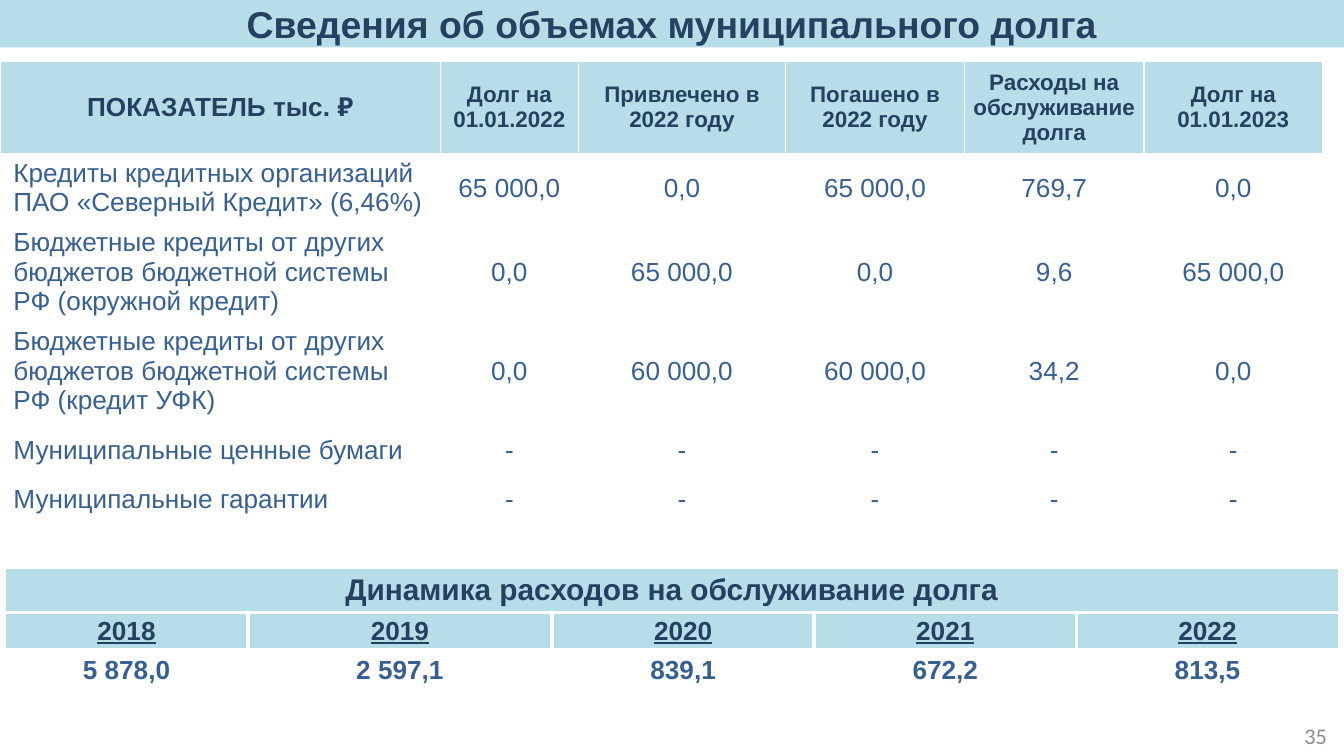
from dataclasses import dataclass

from lxml.etree import SubElement
from pptx import Presentation
from pptx.dml.color import RGBColor as Rgb
from pptx.enum.shapes import MSO_SHAPE as Shape
from pptx.enum.text import MSO_ANCHOR as Anchor, PP_ALIGN as Align
from pptx.oxml.ns import qn
from pptx.util import Pt


@dataclass(frozen=True)
class Theme:
    """Colours, fonts and type sizes of the slide."""
    band: str = "B7DEE8"
    dark: str = "254061"
    blue: str = "376092"
    grey: str = "8C8C8C"
    white: str = "FFFFFF"
    sans: str = "Arial"
    foot: str = "Calibri"
    title: int = 20
    head: int = 16
    body: int = 14
    small: int = 12


THEME = Theme()
DEBT = [
    ["ПОКАЗАТЕЛЬ тыс. ₽", "Долг на 01.01.2022", "Привлечено в 2022 году",
     "Погашено в 2022 году", "Расходы на обслуживание долга", "Долг на 01.01.2023"],
    ["Кредиты кредитных организаций\nПАО «Северный Кредит» (6,46%)",
     "65 000,0", "0,0", "65 000,0", "769,7", "0,0"],
    ["Бюджетные кредиты от других бюджетов бюджетной системы РФ (окружной кредит)",
     "0,0", "65 000,0", "0,0", "9,6", "65 000,0"],
    ["Бюджетные кредиты от других бюджетов бюджетной системы РФ (кредит УФК)",
     "0,0", "60 000,0", "60 000,0", "34,2", "0,0"],
    ["Муниципальные ценные бумаги"] + ["-"] * 5,
    ["Муниципальные гарантии"] + ["-"] * 5,
]
COSTS = {"2018": "5 878,0", "2019": "2 597,1", "2020": "839,1",
         "2021": "672,2", "2022": "813,5"}


def write(frame, text, size, color, bold=False, align=Align.CENTER,
          font=THEME.sans, under=None):
    """Fill a text frame with evenly styled paragraphs."""
    frame.text = text
    frame.word_wrap = True
    for para in frame.paragraphs:
        para.alignment = align
        para.font.name = font
        para.font.size = Pt(size)
        para.font.bold = bold
        para.font.underline = under
        para.font.color.rgb = Rgb.from_string(color)


def edge(cell, widths):
    """Draw white borders on the named sides of a cell."""
    props = cell._tc.get_or_add_tcPr()
    for side in "LRTB":
        if side in widths:
            line = SubElement(props, qn(f"a:ln{side}"), w=str(Pt(widths[side])))
            fill = SubElement(line, qn("a:solidFill"))
            SubElement(fill, qn("a:srgbClr"), val=THEME.white)


def style(cell, text, size, color, pad, band=False, lines=None, **look):
    """Set the text, margins, borders and fill of a cell."""
    side, top = pad
    cell.margin_left = cell.margin_right = Pt(side)
    cell.margin_top = cell.margin_bottom = Pt(top)
    cell.vertical_anchor = Anchor.MIDDLE
    write(cell.text_frame, text, size, color, **look)
    edge(cell, lines or {})
    if band:
        cell.fill.solid()
        cell.fill.fore_color.rgb = Rgb.from_string(THEME.band)
    else:
        cell.fill.background()


def grid(slide, left, top, cols, rows):
    """Add a plain table with the given column widths and row heights."""
    table = slide.shapes.add_table(len(rows), len(cols), Pt(left), Pt(top),
                                   Pt(sum(cols)), Pt(sum(rows))).table
    table.first_row = table.horz_banding = False
    for col, width in zip(table.columns, cols):
        col.width = Pt(width)
    for row, height in zip(table.rows, rows):
        row.height = Pt(height)
    return table


def banner(slide, left, top, width, height):
    """Place the title band."""
    band = slide.shapes.add_shape(Shape.RECTANGLE, Pt(left), Pt(top),
                                  Pt(width), Pt(height))
    band.shadow.inherit = False
    band.fill.solid()
    band.fill.fore_color.rgb = Rgb.from_string(THEME.band)
    band.line.fill.background()
    band.text_frame.vertical_anchor = Anchor.MIDDLE
    write(band.text_frame, "Сведения об объемах муниципального долга",
          THEME.title, THEME.dark, bold=True)


def debts(slide, left, top, width):
    """Place the table of debts by kind."""
    parts = [236, 74, 111, 96, 96, 96]
    cols = [width * part / sum(parts) for part in parts]
    table = grid(slide, left, top, cols, [49.7, 37, 53, 53, 31.7, 21])
    for r, row in enumerate(DEBT):
        for c, text in enumerate(row):
            cell = table.cell(r, c)
            if r == 0:
                style(cell, text, THEME.small if c else THEME.body, THEME.dark,
                      (0 if c else 7.2, 3.6), band=True, bold=True,
                      lines=dict.fromkeys("LRT", 1))
            else:
                style(cell, text, THEME.body, THEME.blue, (7.2, 2.7),
                      align=Align.CENTER if c else Align.LEFT)


def costs(slide, left, top, width):
    """Place the table of yearly debt service costs."""
    parts = [130, 163, 140.5, 140.5, 140.5]
    cols = [width * part / sum(parts) for part in parts]
    table = grid(slide, left, top, cols, [23.5, 20, 22])
    head = table.cell(0, 0)
    head.merge(table.cell(0, len(cols) - 1))
    style(head, "Динамика расходов на обслуживание долга", THEME.head, THEME.dark,
          (7.2, 2.7), band=True, bold=True, lines={"L": 1, "R": 1, "T": 1, "B": 2.25})
    for c, (year, cost) in enumerate(COSTS.items()):
        sides = "T" + "L" * (c > 0) + "R" * (c < len(COSTS) - 1)
        style(table.cell(1, c), year, THEME.body, THEME.dark, (7.2, 2.1), band=True,
              bold=True, under=True, lines=dict.fromkeys(sides, 2.25))
        style(table.cell(2, c), cost, THEME.body, THEME.blue, (7.2, 2.1), bold=True)


def folio(slide, left, top, width, height):
    """Place the page number."""
    box = slide.shapes.add_textbox(Pt(left), Pt(top), Pt(width), Pt(height))
    box.text_frame.vertical_anchor = Anchor.MIDDLE
    write(box.text_frame, "35", THEME.small, THEME.grey,
          align=Align.RIGHT, font=THEME.foot)


def main():
    """Build and save the slide."""
    deck = Presentation()
    deck.slide_width, deck.slide_height = Pt(720), Pt(405)
    slide = deck.slides.add_slide(deck.slide_layouts[6])
    banner(slide, 0, 0, 720, 25.4)
    costs(slide, 2.8, 304.6, 714.4)
    debts(slide, 0, 32.6, 708.8)
    folio(slide, 550, 383.3, 168, 21.6)
    deck.save("out.pptx")


if __name__ == "__main__":
    main()
